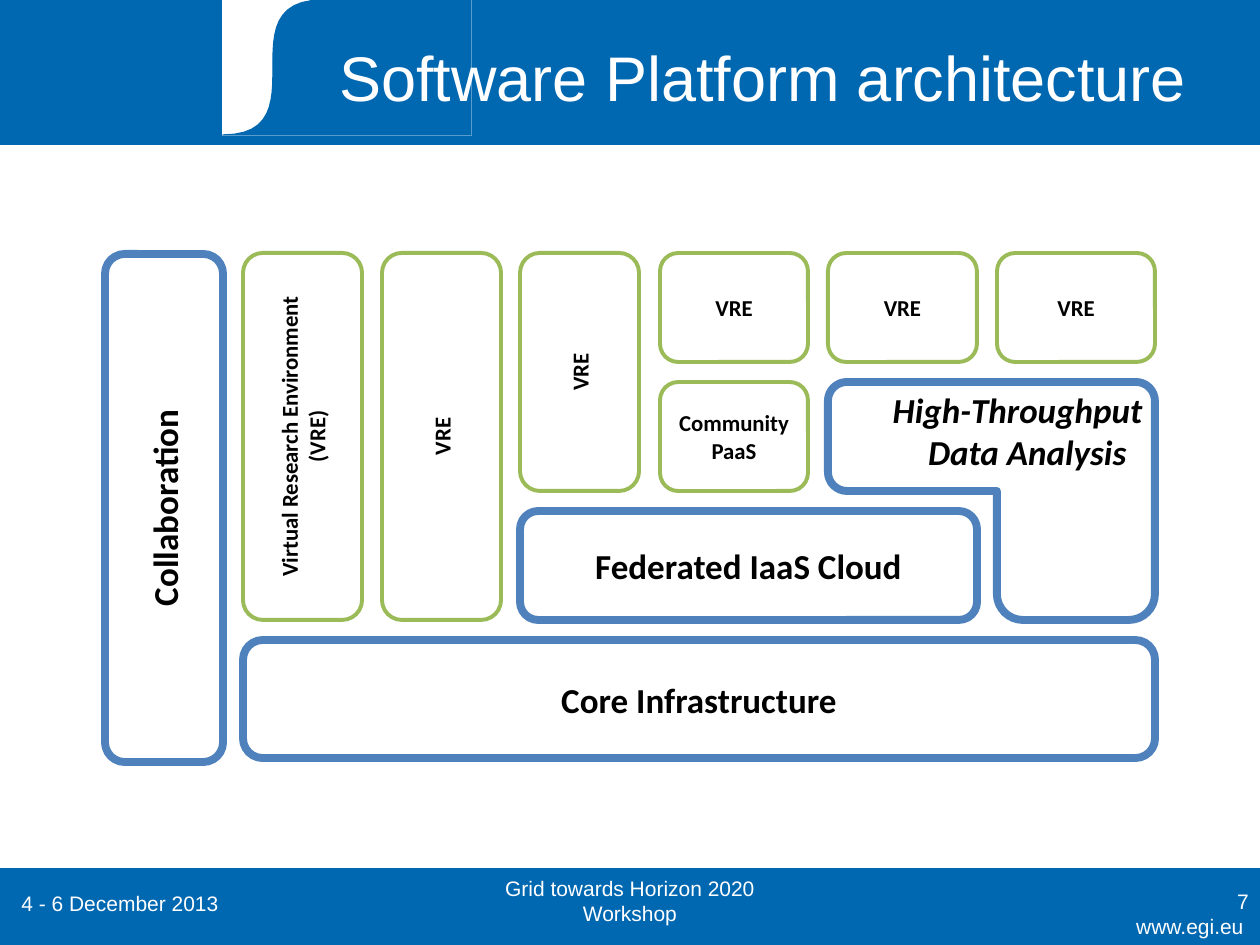
from dataclasses import dataclass
from math import cos, dist, pi, sin

from pptx import Presentation
from pptx import util as u
from pptx.dml.color import RGBColor
from pptx.enum import shapes, text

SCALE = 914400 / 126
BANNER, BLUE, GREEN = "0067B1", "4F81BD", "9BBB59"
WHITE, BLACK = "FFFFFF", "000000"

# Diagram grid: left and right edge of each column, and evenly spaced rows
COLUMNS = [(243, 362), (382, 501), (520, 639), (660, 808), (828, 977), (997, 1155)]
TOP, ROW_STEP, ROW_GAP = 253, 129, 20


def px(length):
    return u.Emu(round(length * SCALE))


def colour(hex_string):
    return RGBColor.from_string(hex_string)


def cell(column, row, rows=1, columns=1):
    """Left, top, width and height of a block on the diagram grid."""
    left, right = COLUMNS[column][0], COLUMNS[column + columns - 1][1]
    return left, TOP + row * ROW_STEP, right - left, rows * ROW_STEP - ROW_GAP


def bezier(start, first, second, end, steps=24):
    points = []
    for step in range(steps + 1):
        t = step / steps
        weights = ((1 - t) ** 3, 3 * t * (1 - t) ** 2, 3 * t ** 2 * (1 - t), t ** 3)
        points.append(tuple(
            sum(w * p[axis] for w, p in zip(weights, (start, first, second, end)))
            for axis in (0, 1)))
    return points


def rounded(corners, steps=8):
    """Outline through (x, y, radius) corners, each turned into a short arc."""
    points = []
    for index, (x, y, radius) in enumerate(corners):
        if not radius:
            points.append((x, y))
            continue
        before, after = corners[index - 1], corners[(index + 1) % len(corners)]
        inward, outward = [
            ((other[0] - x) / dist(other[:2], (x, y)),
             (other[1] - y) / dist(other[:2], (x, y)))
            for other in (before, after)]
        for step in range(steps + 1):
            angle = pi / 2 * step / steps
            points.append(tuple(
                origin + radius * (a * (1 - sin(angle)) + b * (1 - cos(angle)))
                for origin, a, b in zip((x, y), inward, outward)))
    return points


@dataclass
class Painter:
    page: object
    label_font: str = "Calibri"
    page_font: str = "Arial"
    thin: float = 2.25
    thick: float = 4.5

    def style(self, shape, fill, line, width):
        shape.shadow.inherit = False
        shape.fill.solid()
        shape.fill.fore_color.rgb = colour(fill)
        shape.line.color.rgb = colour(line)
        shape.line.width = u.Pt(width)
        return shape

    def set_text(self, shape, lines, size, font, ink, align="CENTER",
                 anchor="MIDDLE", bold=None, italic=None):
        frame = shape.text_frame
        frame.word_wrap = True
        frame.vertical_anchor = text.MSO_ANCHOR[anchor]
        for index, line in enumerate(lines.split("\n")):
            para = frame.add_paragraph() if index else frame.paragraphs[0]
            para.add_run().text = line
            para.alignment = text.PP_ALIGN[align]
            para.font.size = u.Pt(size)
            para.font.name = font
            para.font.bold = bold
            para.font.italic = italic
            para.font.color.rgb = colour(ink)
        return frame

    def rectangle(self, place, fill):
        shape = self.page.shapes.add_shape(
            shapes.MSO_SHAPE.RECTANGLE, *map(px, place))
        self.style(shape, fill, fill, 0.75)

    def outline(self, points, fill, line, width):
        start, *others = [(px(x), px(y)) for x, y in points]
        builder = self.page.shapes.build_freeform(*start)
        builder.add_line_segments(others)
        return self.style(builder.convert_to_shape(), fill, line, width)

    def block(self, place, label, main=False, upright=False):
        """Rounded block: main ones are blue and large, others green and small."""
        box = self.page.shapes.add_shape(
            shapes.MSO_SHAPE.ROUNDED_RECTANGLE, *map(px, place))
        self.style(box, WHITE, BLUE if main else GREEN,
                   self.thick if main else self.thin)
        frame = self.set_text(box, label, 20 if main else 13, self.label_font,
                              BLACK, bold=True)
        if upright:
            frame._txBody.bodyPr.set("vert", "vert270")

    def caption(self, place, label, size=12, align="CENTER", anchor="MIDDLE"):
        box = self.page.shapes.add_textbox(*map(px, place))
        self.set_text(box, label, size, self.page_font, WHITE, align, anchor)


def draw_frame(painter):
    painter.rectangle((0, 869, 1260, 76), BANNER)
    painter.rectangle((0, 0, 1260, 144), BANNER)
    painter.rectangle((223, 0, 248, 135), WHITE)
    curve = bezier((223, 135), (323, 135), (223, 0), (323, 0))
    painter.outline([(471, 0), (471, 135)] + curve, BANNER, BANNER, 0.75)
    painter.caption((292, 16, 942, 120), "Software Platform architecture", 36)
    painter.caption((9, 878, 294, 50), "4 - 6 December 2013", align="LEFT")
    painter.caption((461, 876, 338, 50), "Grid towards Horizon 2020 Workshop")
    painter.caption((968, 876, 293, 50), "7", align="RIGHT")
    painter.caption((1057, 907, 199, 39), "www.egi.eu", align="RIGHT", anchor="TOP")


def draw_diagram(painter):
    painter.block((105, 254, 118, 508), "Collaboration", main=True, upright=True)
    painter.block(cell(0, 0, rows=3), "Virtual Research Environment\n(VRE)",
                  upright=True)
    painter.block(cell(1, 0, rows=3), "VRE", upright=True)
    painter.block(cell(2, 0, rows=2), "VRE", upright=True)
    for column in (3, 4, 5):
        painter.block(cell(column, 0), "VRE")
    painter.block(cell(3, 1), "Community PaaS")
    painter.block(cell(2, 2, columns=3), "Federated IaaS Cloud", main=True)
    painter.block((243, 640, 912, 118), "Core Infrastructure", main=True)

    left, top, width, height = cell(4, 1, rows=2, columns=2)
    right, bottom = left + width, top + height
    inner, notch = COLUMNS[5][0], top + ROW_STEP - ROW_GAP
    analysis = painter.outline(
        rounded([(left, top, 19), (right, top, 19), (right, bottom, 26),
                 (inner, bottom, 26), (inner, notch, 0), (left, notch, 19)]),
        WHITE, BLUE, painter.thick)
    frame = painter.set_text(analysis, "High-Throughput\nData Analysis", 20,
                             painter.label_font, BLACK, "RIGHT", "TOP",
                             bold=True, italic=True)
    frame.paragraphs[1]._p.get_or_add_pPr().set("marR", str(px(16)))


def main():
    deck = Presentation()
    deck.slide_width, deck.slide_height = px(1260), px(945)
    painter = Painter(deck.slides.add_slide(deck.slide_layouts[6]))
    draw_frame(painter)
    draw_diagram(painter)
    deck.save("out.pptx")


if __name__ == "__main__":
    main()
